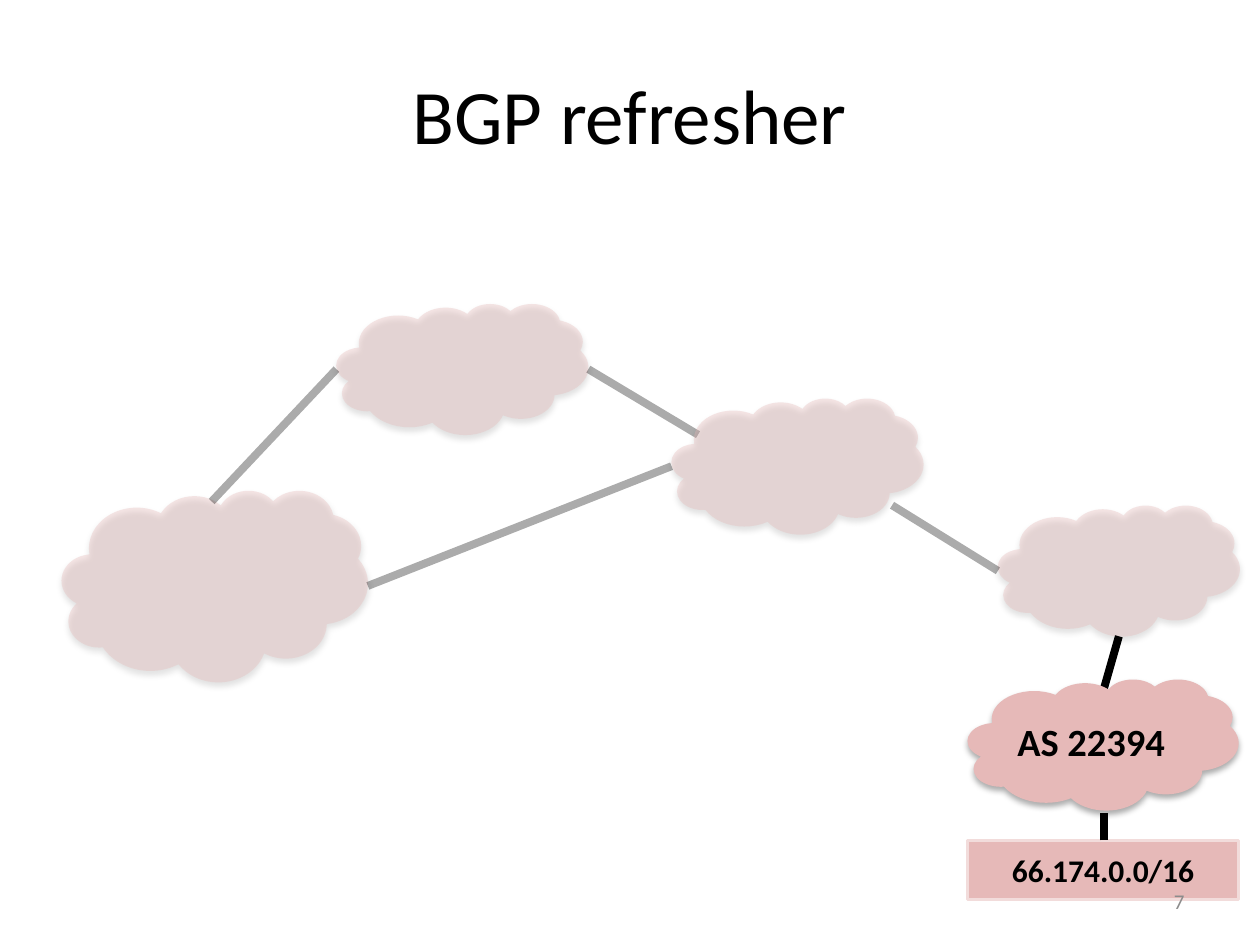
from dataclasses import dataclass

from lxml import etree
from pptx import Presentation
from pptx.dml.color import RGBColor
from pptx.enum.shapes import MSO_CONNECTOR, MSO_SHAPE
from pptx.enum.text import MSO_ANCHOR, PP_ALIGN
from pptx.oxml.ns import qn
from pptx.util import Inches, Pt

CLOUD = MSO_SHAPE.CLOUD
RECTANGLE = MSO_SHAPE.RECTANGLE
STRAIGHT = MSO_CONNECTOR.STRAIGHT
MIDDLE = MSO_ANCHOR.MIDDLE
LEFT, CENTER, RIGHT = PP_ALIGN.LEFT, PP_ALIGN.CENTER, PP_ALIGN.RIGHT
TITLE_ONLY = 5


@dataclass(frozen=True)
class Theme:
    font: str = "Calibri"
    ink: str = "000000"
    rose: str = "E6B9B8"
    pale_rose: str = "F2DCDB"
    grey: str = "8C8C8C"
    title_size: int = 44
    network_size: int = 22
    prefix_size: int = 18
    number_size: int = 12
    link_width: float = 4.5
    border_width: int = 2
    faded_cloud: int = 35
    faded_link: int = 32
    shadow_opacity: int = 32


THEME = Theme()


def set_opacity(color_parent, percent):
    color = next(color_parent.iter(qn("a:srgbClr")))
    etree.SubElement(color, qn("a:alpha"), val=str(percent * 1000))


def add_soft_shadow(shape):
    shape.shadow.inherit = False
    effects = shape._element.spPr.find(qn("a:effectLst"))
    shadow = etree.SubElement(
        effects, qn("a:outerShdw"), blurRad=str(Pt(3.5)), dist=str(Pt(2.2)),
        dir="5400000", rotWithShape="0")
    etree.SubElement(shadow, qn("a:srgbClr"), val=THEME.ink)
    set_opacity(shadow, THEME.shadow_opacity)


def write(shape, text, size, align=CENTER, bold=False, color=THEME.ink):
    frame = shape.text_frame
    frame.vertical_anchor = MIDDLE
    frame.text = text
    para = frame.paragraphs[0]
    para.alignment = align
    para.font.name = THEME.font
    para.font.size = Pt(size)
    para.font.bold = bold
    para.font.color.rgb = RGBColor.from_string(color)


def add_title(slide, text):
    title = slide.shapes.title
    title.left, title.top = Inches(0.5), Inches(0.28)
    title.width, title.height = Inches(9), Inches(1.25)
    write(title, text, THEME.title_size)


def add_block(slide, preset, bounds):
    block = slide.shapes.add_shape(preset, *map(Inches, bounds))
    block.shadow.inherit = False
    block.fill.solid()
    block.fill.fore_color.rgb = RGBColor.from_string(THEME.rose)
    block.line.fill.background()
    return block


def add_cloud(slide, bounds, faded=True):
    cloud = add_block(slide, CLOUD, bounds)
    add_soft_shadow(cloud)
    if faded:
        set_opacity(cloud._element.spPr.find(qn("a:solidFill")), THEME.faded_cloud)
    return cloud


def add_link(slide, start, end, faded=True):
    link = slide.shapes.add_connector(STRAIGHT, *map(Inches, (*start, *end)))
    link.line.width = Pt(THEME.link_width)
    link.line.color.rgb = RGBColor.from_string(THEME.ink)
    if faded:
        set_opacity(link._element.spPr.find(qn("a:ln")), THEME.faded_link)
    etree.SubElement(link._element.spPr, qn("a:effectLst"))


def add_network(slide, name, bounds):
    cloud = add_cloud(slide, bounds, faded=False)
    write(cloud, name, THEME.network_size, LEFT, bold=True)
    cloud.text_frame.word_wrap = False


def add_prefix(slide, prefix, bounds):
    box = add_block(slide, RECTANGLE, bounds)
    box.line.color.rgb = RGBColor.from_string(THEME.pale_rose)
    box.line.width = Pt(THEME.border_width)
    write(box, prefix, THEME.prefix_size, bold=True)


def add_page_number(slide, number):
    box = slide.shapes.add_textbox(*map(Inches, (7.17, 6.95, 2.33, 0.4)))
    box.text_frame.word_wrap = True
    write(box, number, THEME.number_size, RIGHT, color=THEME.grey)


def main():
    deck = Presentation()
    deck.slide_width, deck.slide_height = Inches(10), Inches(7.5)
    slide = deck.slides.add_slide(deck.slide_layouts[TITLE_ONLY])
    add_title(slide, "BGP refresher")

    for bounds in (
        (0.49, 3.89, 2.43, 1.52),
        (2.67, 2.41, 2, 1.04),
        (7.92, 4.01, 1.92, 1.04),
    ):
        add_cloud(slide, bounds)
    for start, end in (
        ((1.68, 3.98), (2.67, 2.93)),
        ((2.92, 4.65), (5.33, 3.7)),
        ((4.67, 2.93), (5.54, 3.45)),
        ((7.92, 4.53), (7.08, 4.01)),
    ):
        add_link(slide, start, end)
    add_cloud(slide, (5.33, 3.16, 2, 1.08))

    add_link(slide, (8.88, 5.05), (8.76, 5.47), faded=False)
    add_prefix(slide, "66.174.0.0/16", (7.68, 6.67, 2.15, 0.47))
    add_link(slide, (8.76, 6.67), (8.76, 6.45), faded=False)
    add_page_number(slide, "7")
    add_network(slide, "AS 22394", (7.68, 5.39, 2.15, 1.04))
    deck.save("out.pptx")


if __name__ == "__main__":
    main()
